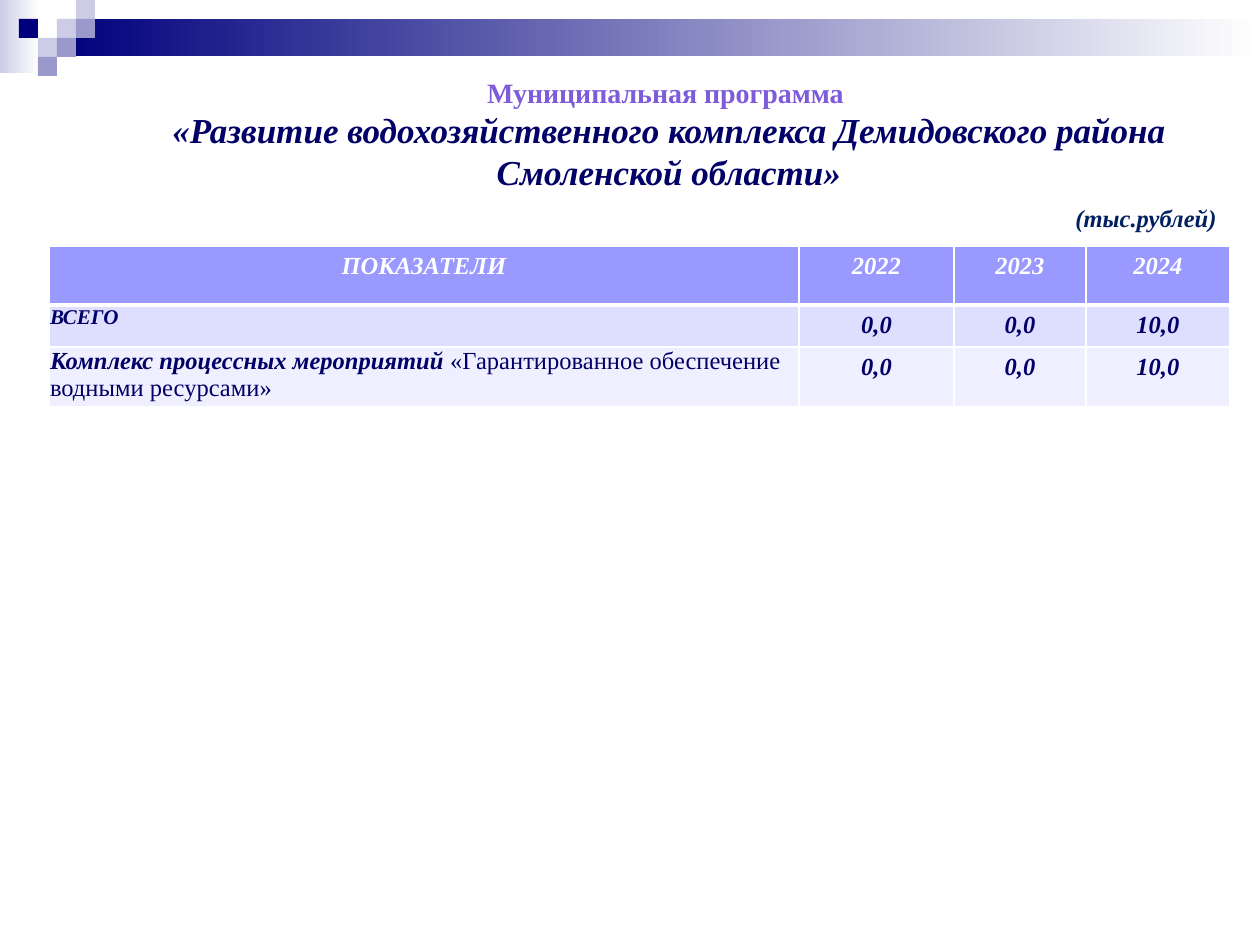
from pptx import Presentation
from pptx.dml.color import RGBColor
from pptx.enum.shapes import MSO_SHAPE
from pptx.enum.text import MSO_ANCHOR, MSO_AUTO_SIZE, PP_ALIGN
from pptx.oxml import parse_xml
from pptx.oxml.ns import nsdecls
from pptx.util import Pt

SCALE = 914400 / 126
NAVY = RGBColor(0x00, 0x00, 0x7D)
INK = RGBColor(0x00, 0x00, 0x66)
DEEP = RGBColor(0x00, 0x20, 0x60)
VIOLET = RGBColor(0x7D, 0x5C, 0xDA)
LILAC = RGBColor(0x99, 0x99, 0xCC)
PALE = RGBColor(0xCC, 0xCC, 0xE6)
WHITE = RGBColor(0xFF, 0xFF, 0xFF)
HEAD = RGBColor(0x99, 0x99, 0xFF)
BANDS = [RGBColor(0xDE, 0xDE, 0xFF), RGBColor(0xEF, 0xEF, 0xFF)]


def px(n):
    return round(n * SCALE)


class Deck:
    font = "Times New Roman"

    def __init__(self, wide, high):
        self.prs = Presentation()
        self.prs.slide_width, self.prs.slide_height = px(wide), px(high)
        self.slide = self.prs.slides.add_slide(self.prs.slide_layouts[5])

    def style(self, para, size, color, italic=True, align=PP_ALIGN.CENTER):
        para.alignment = align
        font = para.font
        font.name, font.size, font.color.rgb = self.font, Pt(size), color
        font.bold, font.italic = True, italic

    def rect(self, x, y, w, h, color, fade=None):
        shape = self.slide.shapes.add_shape(
            MSO_SHAPE.RECTANGLE, px(x), px(y), px(w), px(h))
        shape.shadow.inherit = False
        shape.line.fill.background()
        if fade is None:
            shape.fill.solid()
            shape.fill.fore_color.rgb = color
        else:
            shape.fill.gradient()
            shape.fill.gradient_angle = 0
            for stop, tone in zip(shape.fill.gradient_stops, (color, fade)):
                stop.color.rgb = tone

    def title(self, x, y, w, h, lines):
        shape = self.slide.shapes.title
        shape.left, shape.top, shape.width, shape.height = map(px, (x, y, w, h))
        frame = shape.text_frame
        frame.auto_size = MSO_AUTO_SIZE.NONE
        frame.vertical_anchor = MSO_ANCHOR.TOP
        frame.text = "\n".join(text for text, *_ in lines)
        for para, (_, *look) in zip(frame.paragraphs, lines):
            self.style(para, *look)

    def label(self, x, y, w, h, text, size, color):
        frame = self.slide.shapes.add_textbox(
            px(x), px(y), px(w), px(h)).text_frame
        frame.word_wrap = False
        frame.text = text
        self.style(frame.paragraphs[0], size, color, align=PP_ALIGN.LEFT)

    def cell(self, cell, text, size, color, fill, base, align=PP_ALIGN.CENTER):
        para = cell.text_frame.paragraphs[0]
        para.text = text
        self.style(para, size, color, align=align)
        props = cell._tc.get_or_add_tcPr()
        for side, width in (("L", 1), ("R", 1), ("T", 1), ("B", base)):
            props.append(parse_xml(
                f'<a:ln{side} {nsdecls("a")} w="{Pt(width)}"><a:solidFill>'
                f'<a:srgbClr val="{WHITE}"/></a:solidFill></a:ln{side}>'))
        cell.fill.solid()
        cell.fill.fore_color.rgb = fill
        return para

    def table(self, x, y, cols, rows, data):
        grid = self.slide.shapes.add_table(
            len(rows), len(cols), px(x), px(y), px(sum(cols)), px(sum(rows))).table
        for col, wide in zip(grid.columns, cols):
            col.width = px(wide)
        for row, high in zip(grid.rows, rows):
            row.height = px(high)
        # Header row
        for c, text in enumerate(data[0]):
            self.cell(grid.cell(0, c), text, 14, WHITE, HEAD, 3)
        # Banded rows: a name with an optional plain tail, then the values
        for r, ((name, tail, size), *values) in enumerate(data[1:], 1):
            fill = BANDS[r - 1]
            first = grid.cell(r, 0)
            first.margin_left = first.margin_right = first.margin_top = px(1)
            first.margin_bottom = 0
            para = self.cell(first, name, size, INK, fill, 1, PP_ALIGN.LEFT)
            if tail:
                run = para.add_run()
                run.text = tail
                run.font.bold = run.font.italic = False
            for c, text in enumerate(values, 1):
                self.cell(grid.cell(r, c), text, 14, INK, fill, 1)


def main():
    deck = Deck(1260, 945)

    # Header bars
    deck.rect(0, 0, 39, 73, PALE, WHITE)
    deck.rect(57, 19, 1203, 37, NAVY, WHITE)

    # Mosaic of squares, by column and row
    step = 19
    for col, row, color in [(3, 1, PALE), (4, 0, PALE), (4, 1, LILAC),
                            (2, 2, PALE), (1, 1, NAVY), (3, 2, LILAC),
                            (2, 3, LILAC)]:
        deck.rect(col * step, row * step, step, step, color)

    # Title and unit
    deck.title(128, 69, 1082, 131, [
        ("Муниципальная программа ", 16, VIOLET, False),
        ("«Развитие водохозяйственного комплекса Демидовского района "
         "Смоленской области»", 20, INK, True)])
    deck.label(1063, 197, 168, 43, "(тыс.рублей)", 14, DEEP)

    # Programme figures
    deck.table(49, 246, [750, 155, 132, 144], [59, 42, 59], [
        ["ПОКАЗАТЕЛИ", "2022", "2023", "2024"],
        [("ВСЕГО", "", 12), "0,0", "0,0", "10,0"],
        [("Комплекс процессных мероприятий ",
          "«Гарантированное обеспечение водными ресурсами»", 14),
         "0,0", "0,0", "10,0"]])

    deck.prs.save("out.pptx")


if __name__ == "__main__":
    main()
